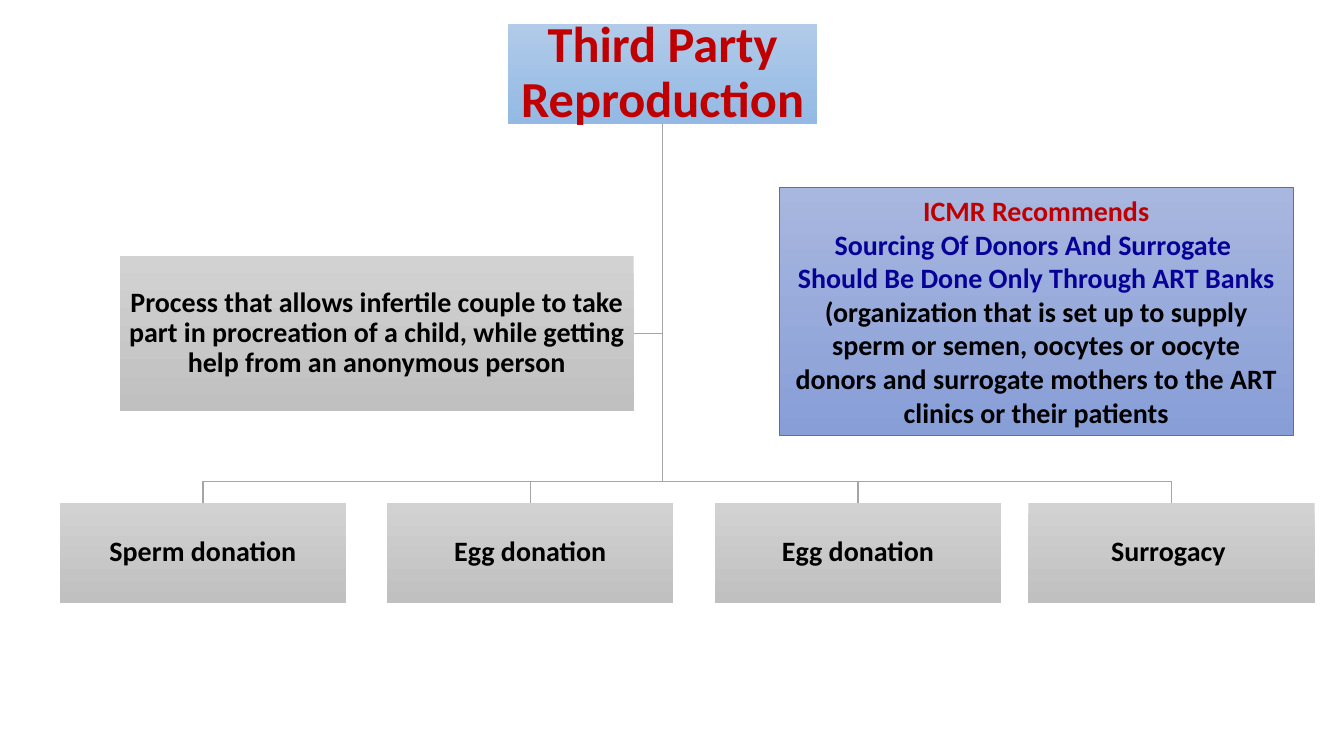
"""Build the third party reproduction slide."""
from collections import namedtuple

from pptx import Presentation
from pptx import util as u
from pptx.dml.color import RGBColor
from pptx.enum import shapes, text

Box = namedtuple("Box", "left top width height")

BLUE = ("B1CBE9", "93B9E4")
GREY = ("D2D2D2", "C0C0C0")
PERIWINKLE = ("A8B7DF", "889ED7")
RED, NAVY, BLACK = "C00000", "080198", "000000"

TITLE = Box(12.8, 0.6, 7.8, 2.52)
DEFINITION = Box(3.02, 6.45, 12.95, 3.91)
ADVICE = Box(19.64, 4.72, 12.95, 6.24)
OPTION_LEFTS = (1.51, 9.76, 18.02, 25.92)
OPTIONS = [Box(left, 12.67, 7.21, 2.52) for left in OPTION_LEFTS]
OPTION_NAMES = ("Sperm donation", "Egg donation", "Egg donation", "Surrogacy ")


def colour(value):
    """Turn a hex string into a colour."""
    return RGBColor.from_string(value)


def place(shape, box):
    """Move and size a shape to a box in centimetres."""
    shape.left, shape.top, shape.width, shape.height = (u.Cm(length) for length in box)


def fill_gradient(shape, colours):
    """Fill a shape from top to bottom with two colours."""
    shape.fill.gradient()
    shape.fill.gradient_angle = 270
    for stop, value in zip(shape.fill.gradient_stops, colours):
        stop.color.rgb = colour(value)


def format_frame(frame, margin_x, margin_y):
    """Set wrapping, anchor and margins, and return the centred paragraph."""
    frame.word_wrap = True
    frame.auto_size = text.MSO_AUTO_SIZE.NONE
    frame.vertical_anchor = text.MSO_ANCHOR.MIDDLE
    frame.margin_left = frame.margin_right = u.Cm(margin_x)
    frame.margin_top = frame.margin_bottom = u.Cm(margin_y)
    paragraph = frame.paragraphs[0]
    paragraph.alignment = text.PP_ALIGN.CENTER
    paragraph.space_before = u.Pt(0)
    return paragraph


def add_run(paragraph, words, size, value):
    """Add one bold run."""
    run = paragraph.add_run()
    run.text = words
    run.font.name = "Calibri"
    run.font.size = u.Pt(size)
    run.font.bold = True
    run.font.color.rgb = colour(value)


def add_panel(slide, box, colours):
    """Add a gradient rectangle without outline."""
    shape = slide.shapes.add_shape(shapes.MSO_SHAPE.RECTANGLE, *(u.Cm(length) for length in box))
    shape.shadow.inherit = False
    shape.line.fill.background()
    fill_gradient(shape, colours)
    return shape


def add_title(slide, box):
    """Place the title at the root of the chart."""
    title = slide.shapes.title
    place(title, box)
    fill_gradient(title, BLUE)
    paragraph = format_frame(title.text_frame, 0.08, 0.08)
    paragraph.line_spacing = 0.9
    add_run(paragraph, "Third Party Reproduction", 36, RED)


def add_node(slide, box, words):
    """Add a grey chart node."""
    shape = add_panel(slide, box, GREY)
    paragraph = format_frame(shape.text_frame, 0.03, 0.03)
    paragraph.line_spacing = 0.9
    add_run(paragraph, words, 20, BLACK)


def add_branch(slide, points):
    """Draw an open bent line through points in centimetres."""
    start, *rest = [(u.Cm(x), u.Cm(y)) for x, y in points]
    builder = slide.shapes.build_freeform(*start)
    builder.add_line_segments(rest, close=False)
    shape = builder.convert_to_shape()
    shape.shadow.inherit = False
    shape.fill.background()
    shape.line.color.rgb = colour("A5A5A5")
    shape.line.width = u.Pt(1)


def add_tree(slide, root, side, leaves):
    """Join the root to the side node and to the leaves, and add the nodes."""
    trunk = root.left + root.width / 2
    bottom = root.top + root.height
    middle = side.top + side.height / 2
    add_branch(slide, [(trunk, bottom), (trunk, middle), (side.left + side.width, middle)])
    for leaf in leaves:
        centre, bus = leaf.left + leaf.width / 2, leaf.top - 0.53
        add_branch(slide, [(trunk, bottom), (trunk, bus), (centre, bus), (centre, leaf.top)])
    for leaf, name in zip(leaves, OPTION_NAMES):
        add_node(slide, leaf, name)
    add_node(slide, side, "Process that allows infertile couple to take part in procreation "
                          "of a child, while getting help from an anonymous person")


def add_advice(slide, box):
    """Add the outlined recommendation panel."""
    shape = add_panel(slide, box, PERIWINKLE)
    shape.line.color.rgb = colour("4472C4")
    shape.line.width = u.Pt(0.5)
    paragraph = format_frame(shape.text_frame, 0.25, 0.13)
    add_run(paragraph, "ICMR Recommends", 20, RED)
    paragraph.add_line_break()
    add_run(paragraph, "Sourcing Of Donors And Surrogate ", 20, NAVY)
    paragraph.add_line_break()
    add_run(paragraph, "Should Be Done Only Through ART Banks ", 20, NAVY)
    add_run(paragraph, "(organization that is set up to supply sperm or semen, oocytes or oocyte "
                       "donors and surrogate mothers to the ART clinics or their patients", 20, BLACK)


def main():
    """Build and save the presentation."""
    presentation = Presentation()
    presentation.slide_width, presentation.slide_height = u.Cm(33.87), u.Cm(19.05)
    slide = presentation.slides.add_slide(presentation.slide_layouts[5])
    add_title(slide, TITLE)
    add_tree(slide, TITLE, DEFINITION, OPTIONS)
    add_advice(slide, ADVICE)
    presentation.save("out.pptx")


if __name__ == "__main__":
    main()
